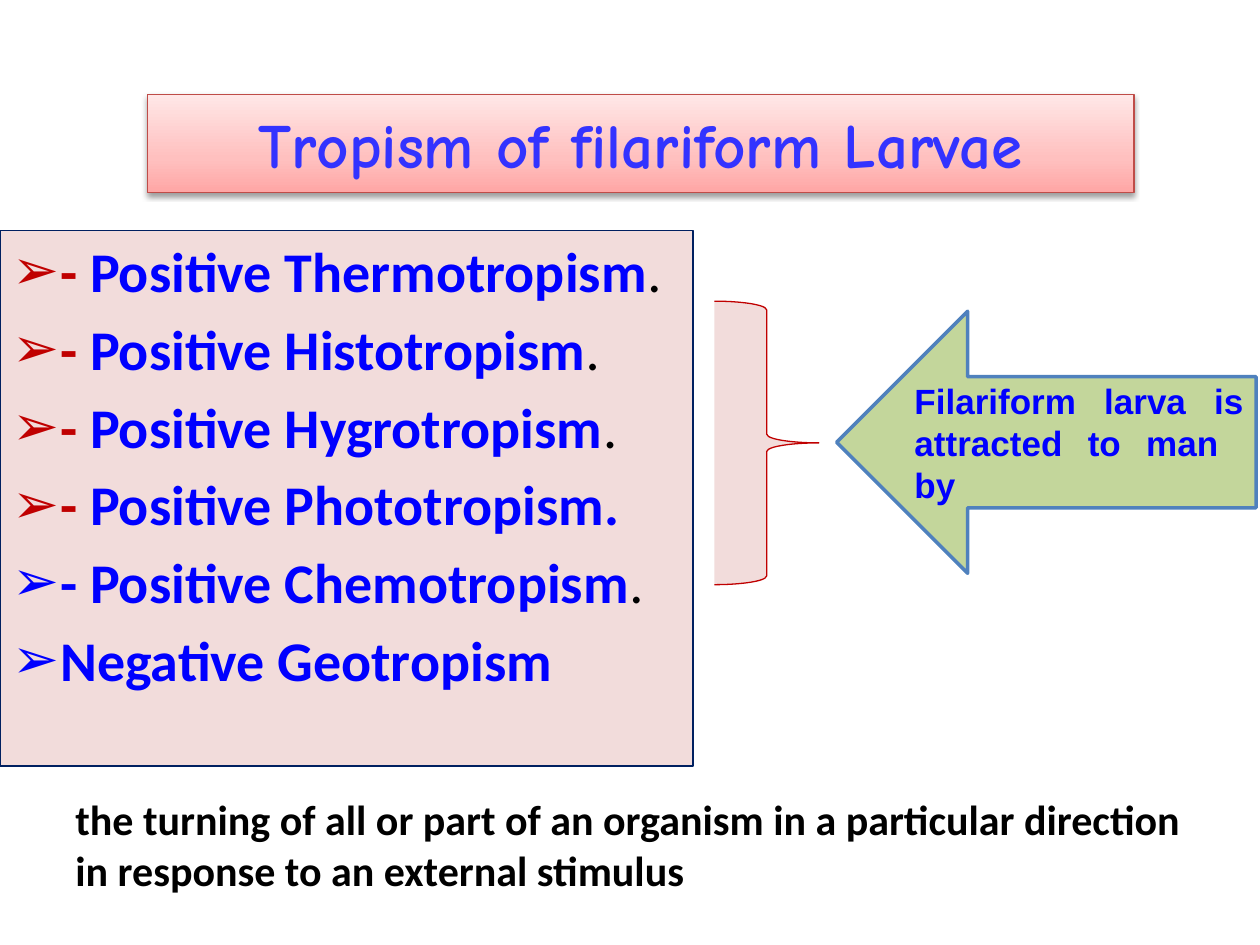
from dataclasses import dataclass
from typing import NamedTuple

from lxml.etree import SubElement as Sub
from pptx import Presentation as Deck
from pptx.dml.color import RGBColor as Rgb
from pptx.enum.shapes import MSO_SHAPE as Form
from pptx.enum.text import MSO_ANCHOR as Anchor, PP_ALIGN as Align
from pptx.oxml import parse_xml as to_xml
from pptx.oxml.ns import nsdecls, qn
from pptx.util import Inches, Pt


@dataclass(frozen=True)
class Theme:
    title: str = "3333FF"
    blue: str = "0000FF"
    red: str = "C00000"
    black: str = "000000"
    pink: str = "F2DCDB"
    navy: str = "002060"
    green: str = "C3D69B"
    steel: str = "4F81BD"
    rose: str = "BF4C48"
    fade: tuple = ((0, "FFA6A5"), (35, "FFC0BF"), (100, "FFE7E7"))
    head: int = 36
    list: int = 32
    note: int = 24
    label: int = 20


class Box(NamedTuple):
    left: float
    top: float
    width: float
    height: float


class Run(NamedTuple):
    text: str
    color: str
    bold: bool = True


class Item(NamedTuple):
    dash: str
    name: str
    stop: str = ""
    color: str = Theme.red


ITEMS = (
    Item("- ", "Positive Thermotropism", "."),
    Item("- ", "Positive Histotropism", "."),
    Item("- ", "Positive Hygrotropism", "."),
    Item("- ", "Positive Phototropism."),
    Item("- ", "Positive Chemotropism", ".", Theme.blue),
    Item("", "Negative Geotropism"),
)


def place(box: Box) -> list:
    return [Inches(side) for side in box]


def draw(slide, form, box: Box, fill: str, line: str, width: float):
    shape = slide.shapes.add_shape(form, *place(box))
    shape.shadow.inherit = False
    shape.fill.solid()
    shape.fill.fore_color.rgb = Rgb.from_string(fill)
    shape.line.color.rgb = Rgb.from_string(line)
    shape.line.width = Pt(width)
    return shape


def write(shape, rows, *, size, font, align=Align.LEFT, anchor=Anchor.TOP, gap=0, bullet=""):
    frame = shape.text_frame
    frame.word_wrap = True
    frame.vertical_anchor = anchor
    for index, runs in enumerate(rows):
        para = frame.add_paragraph() if index else frame.paragraphs[0]
        para.alignment = align
        para.space_before = Pt(gap)
        if bullet:
            mark(para, bullet)
        for part in runs:
            run = para.add_run()
            run.text = part.text
            run.font.size = Pt(size)
            run.font.name = font
            run.font.bold = part.bold
            run.font.color.rgb = Rgb.from_string(part.color)


def mark(para, sign: str) -> None:
    props = para._p.get_or_add_pPr()
    indent = Inches(0.38)
    props.set("marL", str(indent))
    props.set("indent", str(-indent))
    Sub(props, qn("a:buFont"), typeface="Wingdings 2" if sign == "" else "Arial")
    Sub(props, qn("a:buChar"), char=sign)


def shade(shape, stops, angle: int) -> None:
    """Give a shape a linear gradient and a soft shadow below it."""
    props = shape._element.spPr
    marks = "".join(
        f'<a:gs pos="{pos * 1000}"><a:srgbClr val="{color}"/></a:gs>' for pos, color in stops)
    grad = to_xml(
        f'<a:gradFill {nsdecls("a")} rotWithShape="1"><a:gsLst>{marks}</a:gsLst>'
        f'<a:lin ang="{angle * 60000}" scaled="0"/></a:gradFill>')
    props.replace(props.find(qn("a:solidFill")), grad)
    cast = Sub(props.find(qn("a:effectLst")), qn("a:outerShdw"), blurRad=str(Pt(3.1)),
               dist=str(Pt(1.6)), dir="5400000", rotWithShape="0")
    tone = Sub(cast, qn("a:srgbClr"), val=Theme.black)
    Sub(tone, qn("a:alpha"), val="38000")


def main() -> None:
    look = Theme()
    deck = Deck()
    deck.slide_width, deck.slide_height = Inches(10), Inches(7.5)
    slide = deck.slides.add_slide(deck.slide_layouts[6])

    title = draw(slide, Form.RECTANGLE, Box(1.17, 0.75, 7.83, 0.78), look.pink, look.rose, 0.75)
    shade(title, look.fade, 270)
    write(title, [[Run("Tropism of filariform Larvae", look.title)]], size=look.head,
          font="Comic Neue", align=Align.CENTER, anchor=Anchor.MIDDLE)

    panel = draw(slide, Form.RECTANGLE, Box(0, 1.83, 5.5, 4.25), look.pink, look.navy, 0.75)
    rows = []
    for item in ITEMS:
        parts = (Run(item.dash, item.color), Run(item.name, look.blue),
                 Run(item.stop, look.black, False))
        rows.append([part for part in parts if part.text])
    write(panel, rows, size=look.list, font="Calibri", gap=6, bullet="➢")

    arrow = draw(slide, Form.LEFT_ARROW, Box(6.64, 2.47, 3.33, 2.08), look.green, look.steel, 2)
    write(arrow, [[Run("Filariform larva is attracted to man  by", look.blue)]],
          size=look.label, font="Arial", align=Align.JUSTIFY, anchor=Anchor.MIDDLE)

    draw(slide, Form.RIGHT_BRACE, Box(5.67, 2.39, 0.83, 2.25), look.pink, look.red, 0.75)

    note = slide.shapes.add_textbox(*place(Box(0.5, 6.25, 9.08, 0.91)))
    write(note, [[Run("the turning of all or part of an organism in a particular direction "
                      "in response to an external stimulus", look.black)]],
          size=look.note, font="Calibri")

    deck.save("out.pptx")


if __name__ == "__main__":
    main()
